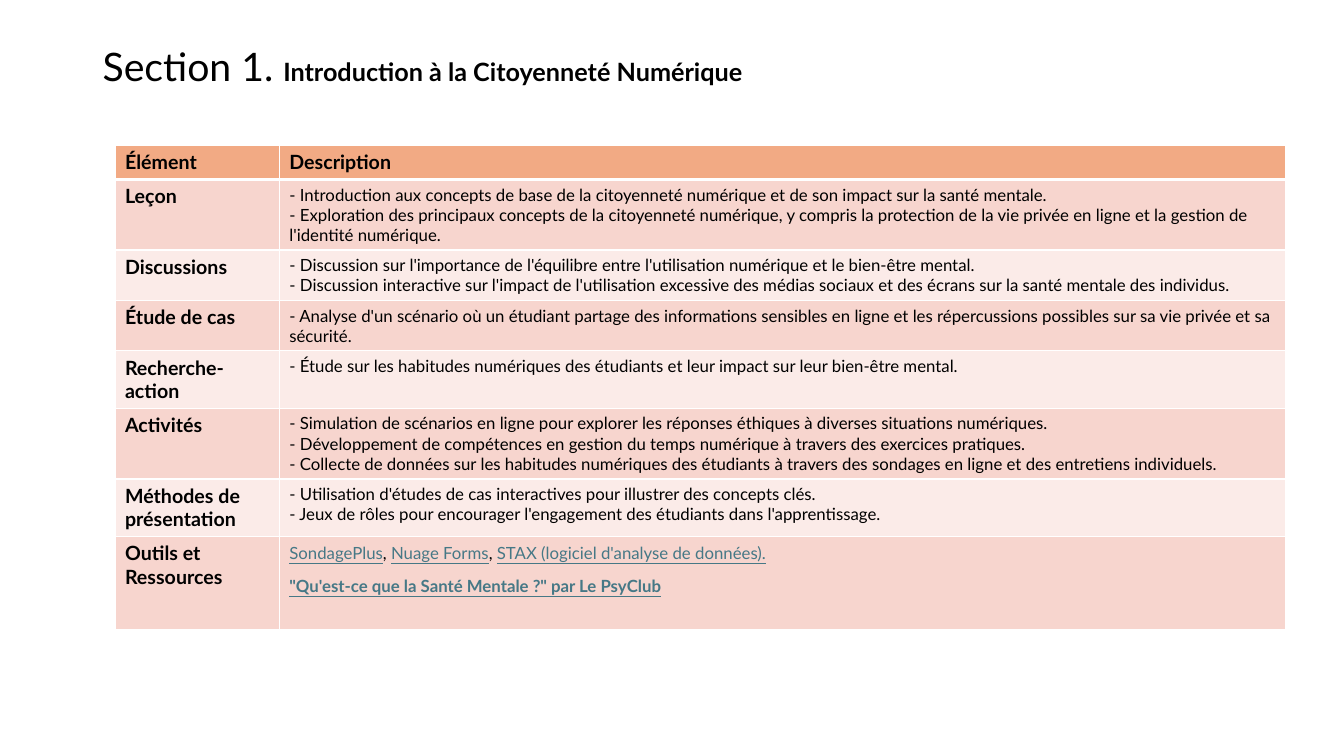
from lxml.etree import SubElement
from pptx import Presentation
from pptx.dml.color import RGBColor
from pptx.enum.text import MSO_ANCHOR
from pptx.oxml.ns import qn
from pptx.util import Inches, Pt

FONT = "Lato"
BLACK, WHITE, LINK = "000000", "FFFFFF", "467886"
HEADER, BANDS = "F2AA84", ("F7D5CE", "FBEBE8")
COLUMNS = (1.63, 9.98)

# Each row: height, element, description lines
ROWS = [
    (0.34, "Élément", ["Description"]),
    (0.69, "Leçon", [
        "- Introduction aux concepts de base de la citoyenneté numérique et de son impact sur la santé mentale.",
        "- Exploration des principaux concepts de la citoyenneté numérique, y compris la protection de la vie "
        "privée en ligne et la gestion de l'identité numérique."]),
    (0.5, "Discussions", [
        "- Discussion sur l'importance de l'équilibre entre l'utilisation numérique et le bien-être mental.",
        "- Discussion interactive sur l'impact de l'utilisation excessive des médias sociaux et des écrans "
        "sur la santé mentale des individus."]),
    (0.5, "Étude de cas", [
        "- Analyse d'un scénario où un étudiant partage des informations sensibles en ligne et les "
        "répercussions possibles sur sa vie privée et sa sécurité."]),
    (0.57, "Recherche-action", [
        "- Étude sur les habitudes numériques des étudiants et leur impact sur leur bien-être mental."]),
    (0.7, "Activités", [
        "- Simulation de scénarios en ligne pour explorer les réponses éthiques à diverses situations numériques.",
        "- Développement de compétences en gestion du temps numérique à travers des exercices pratiques.",
        "- Collecte de données sur les habitudes numériques des étudiants à travers des sondages en ligne "
        "et des entretiens individuels."]),
    (0.57, "Méthodes de présentation", [
        "- Utilisation d'études de cas interactives pour illustrer des concepts clés.",
        "- Jeux de rôles pour encourager l'engagement des étudiants dans l'apprentissage."]),
    (0.93, "Outils et Ressources", []),
]
TOOLS = ["SondagePlus", "Nuage Forms", "STAX (logiciel d'analyse de données)."]
VIDEO = "\"Qu'est-ce que la Santé Mentale ?\" par Le PsyClub"


def rgb(value):
    return RGBColor.from_string(value)


def add_run(p, text, size, color=BLACK, bold=False, underline=False):
    r = p.add_run()
    r.text = text
    r.font.name, r.font.size = FONT, Pt(size)
    r.font.bold, r.font.underline = bold, underline
    r.font.color.rgb = rgb(color)


def next_paragraph(tf, index):
    return tf.add_paragraph() if index else tf.paragraphs[0]


def style_cell(cell, fill, bottom_width):
    tc_pr = cell._tc.get_or_add_tcPr()
    for side in "LRTB":
        width = bottom_width if side == "B" else 1
        ln = SubElement(tc_pr, qn(f"a:ln{side}"), w=str(Pt(width)))
        SubElement(SubElement(ln, qn("a:solidFill")), qn("a:srgbClr"), val=WHITE)
    cell.fill.solid()
    cell.fill.fore_color.rgb = rgb(fill)


def add_title(slide, left, top, width, height):
    tf = slide.shapes.add_textbox(left, top, width, height).text_frame
    tf.word_wrap = True
    tf.vertical_anchor = MSO_ANCHOR.MIDDLE
    p = tf.paragraphs[0]
    p.line_spacing = 0.9
    add_run(p, "Section 1. ", 28)
    add_run(p, "Introduction à la Citoyenneté Numérique", 18, bold=True)


def add_resources(tf):
    for i in range(2):
        p = next_paragraph(tf, i)
        p.line_spacing, p.space_after = 1.07, Pt(8)
        if i:
            add_run(p, VIDEO, 12, LINK, bold=True, underline=True)
            continue
        for n, tool in enumerate(TOOLS):
            if n:
                add_run(p, ", ", 12)
            add_run(p, tool, 12, LINK, underline=True)


def add_plan_table(slide, left, top, width, height):
    table = slide.shapes.add_table(len(ROWS), len(COLUMNS), left, top, width, height).table
    table.horz_banding = False
    for column, share in zip(table.columns, COLUMNS):
        column.width = int(width * share / sum(COLUMNS))
    total = sum(row[0] for row in ROWS)
    for i, (share, element, lines) in enumerate(ROWS):
        table.rows[i].height = int(height * share / total)
        head = i == 0
        name, description = table.cell(i, 0), table.cell(i, 1)
        for cell in (name, description):
            style_cell(cell, HEADER if head else BANDS[(i - 1) % 2], 3 if head else 1)
        add_run(name.text_frame.paragraphs[0], element, 14, bold=True)
        for n, line in enumerate(lines):
            p = next_paragraph(description.text_frame, n)
            add_run(p, line, 14 if head else 12, bold=head)
    # Links in the last row
    add_resources(description.text_frame)


def main():
    prs = Presentation()
    prs.slide_width, prs.slide_height = Inches(13.33), Inches(7.5)
    slide = prs.slides.add_slide(prs.slide_layouts[6])
    add_title(slide, Inches(0.92), Inches(0.15), Inches(11.5), Inches(1.06))
    add_plan_table(slide, Inches(1.14), Inches(1.44), Inches(11.61), Inches(4.8))
    prs.save("out.pptx")


if __name__ == "__main__":
    main()
